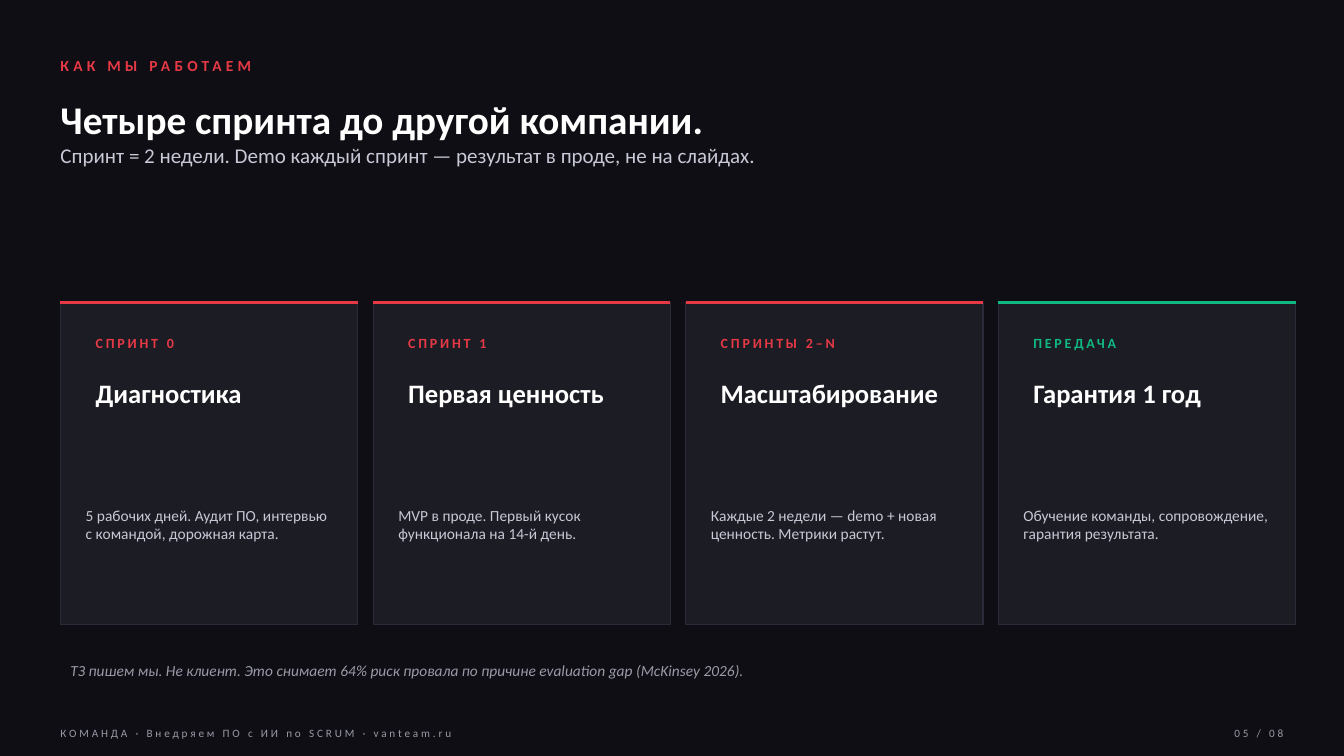
from lxml.etree import SubElement
from pptx import Presentation
from pptx.dml.color import RGBColor
from pptx.enum.shapes import MSO_CONNECTOR, MSO_SHAPE
from pptx.enum.text import MSO_ANCHOR, MSO_AUTO_SIZE, PP_ALIGN
from pptx.oxml.ns import qn
from pptx.util import Inches, Pt

HUES = {
    "back": "0E0E14", "card": "1C1C24", "edge": "2A2A38",
    "red": "E63946", "green": "10B981", "white": "FFFFFF",
    "pale": "C8C8D6", "gray": "9A9AA8",
}
HUES = {name: RGBColor.from_string(hue) for name, hue in HUES.items()}

FORMS = {
    "kicker": {"size": Pt(11), "bold": True},
    "title": {"size": Pt(28), "bold": True},
    "lead": {"size": Pt(15), "bold": False},
    "label": {"size": Pt(10), "bold": True},
    "head": {"size": Pt(19), "bold": True},
    "body": {"size": Pt(11)},
    "note": {"size": Pt(11), "italic": True},
    "foot": {"size": Pt(8)},
}
GAPS = {"kicker": 3, "label": 2, "foot": 2}

deck = Presentation()
deck.slide_width, deck.slide_height = Inches(13.33), Inches(7.5)
slide = deck.slides.add_slide(deck.slide_layouts[5])
slide.background.fill.solid()
slide.background.fill.fore_color.rgb = HUES["back"]
shapes = slide.shapes


def add_run(para, text, form, hue):
    run = para.add_run()
    run.text = text
    run.font.name = "Calibri"
    run.font.color.rgb = HUES[hue]
    for key, value in FORMS[form].items():
        setattr(run.font, key, value)
    if form in GAPS:
        run._r.get_or_add_rPr().set("spc", str(GAPS[form] * 100))


def add_text(spot, text, form, hue, flush=True, align=PP_ALIGN.LEFT):
    frame = shapes.add_textbox(*map(Inches, spot)).text_frame
    frame.word_wrap = True
    frame.vertical_anchor = MSO_ANCHOR.MIDDLE
    if flush:
        for side in SIDES:
            setattr(frame, side, 0)
    frame.paragraphs[0].alignment = align
    add_run(frame.paragraphs[0], text, form, hue)


SIDES = ("margin_left", "margin_top", "margin_right", "margin_bottom")
LEFT = 0.6

add_text((LEFT, 0.5, 12, 0.3), "КАК МЫ РАБОТАЕМ", "kicker", "red")

title = shapes.title
place = {"left": LEFT, "top": 0.95, "width": 12, "height": 1.4}
for key, value in place.items():
    setattr(title, key, Inches(value))
frame = title.text_frame
setup = {
    "word_wrap": True, "auto_size": MSO_AUTO_SIZE.NONE,
    "vertical_anchor": MSO_ANCHOR.TOP, **dict.fromkeys(SIDES, 0),
}
for key, value in setup.items():
    setattr(frame, key, value)
para = frame.paragraphs[0]
para.alignment = PP_ALIGN.LEFT
para.space_after = Pt(4)
add_run(para, "Четыре спринта до другой компании.", "title", "white")
para.add_line_break()
SubElement(para._p.find(qn("a:br")), qn("a:rPr"), sz="2800")
add_run(para, "Спринт = 2 недели. Demo каждый спринт — результат в проде, не на слайдах.",
        "lead", "pale")

CARDS = [
    ("СПРИНТ 0", "Диагностика",
     "5 рабочих дней. Аудит ПО, интервью с командой, дорожная карта.", "red"),
    ("СПРИНТ 1", "Первая ценность",
     "MVP в проде. Первый кусок функционала на 14-й день.", "red"),
    ("СПРИНТЫ 2–N", "Масштабирование",
     "Каждые 2 недели — demo + новая ценность. Метрики растут.", "red"),
    ("ПЕРЕДАЧА", "Гарантия 1 год",
     "Обучение команды, сопровождение, гарантия результата.", "green"),
]
TOP, WIDE, TALL, GAP, PAD = 3, 2.95, 3.2, 0.15, 0.25

for col, (label, head, body, hue) in enumerate(CARDS):
    x = LEFT + col * (WIDE + GAP)
    card = shapes.add_shape(MSO_SHAPE.RECTANGLE, *map(Inches, (x, TOP, WIDE, TALL)))
    card.shadow.inherit = False
    card.fill.solid()
    card.fill.fore_color.rgb = HUES["card"]
    card.line.color.rgb = HUES["edge"]
    card.line.width = Pt(0.75)

    bar = shapes.add_connector(MSO_CONNECTOR.STRAIGHT,
                               *map(Inches, (x, TOP, x + WIDE, TOP)))
    bar.line.color.rgb = HUES[hue]
    bar.line.width = Pt(2.5)
    SubElement(bar._element.spPr, qn("a:effectLst"))

    inner, span = x + PAD, WIDE - 2 * PAD
    add_text((inner, 3.25, span, 0.3), label, "label", hue, flush=False)
    add_text((inner, 3.65, span, 0.5), head, "head", "white", flush=False)
    add_text((inner, 4.4, span, 1.6), body, "body", "pale")

add_text((LEFT, 6.45, 12, 0.4),
         "ТЗ пишем мы. Не клиент. Это снимает 64% риск провала "
         "по причине evaluation gap (McKinsey 2026).",
         "note", "gray", flush=False)
add_text((LEFT, 7.15, 9, 0.25),
         "КОМАНДА · Внедряем ПО с ИИ по SCRUM · vanteam.ru", "foot", "gray")
add_text((11.13, 7.15, 1.6, 0.25), "05 / 08", "foot", "gray", align=PP_ALIGN.RIGHT)

deck.save("out.pptx")
